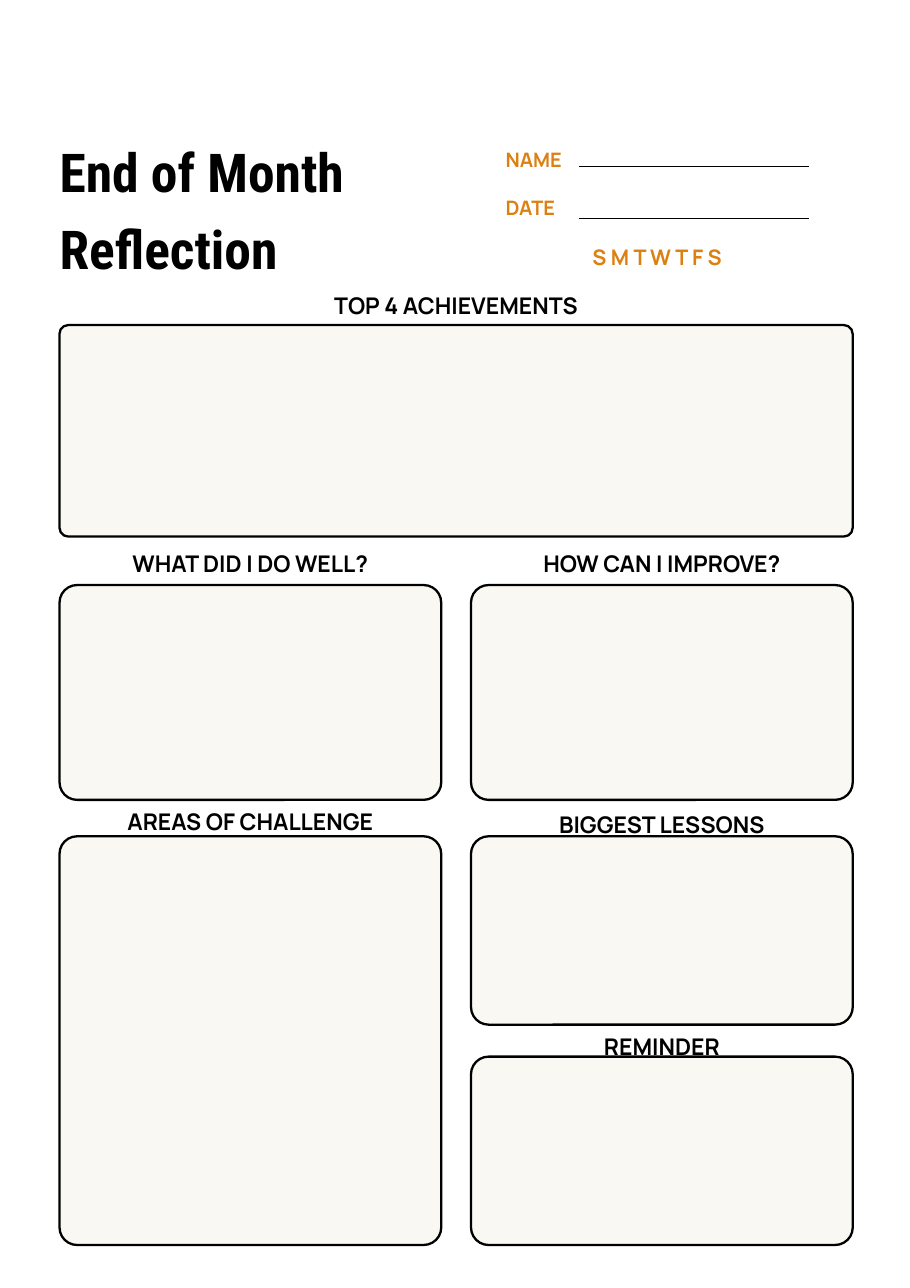
from pptx import Presentation
from pptx import util as u
from pptx.dml.color import RGBColor
from pptx.enum import shapes, text
from pptx.oxml.ns import qn
from lxml import etree

# Content: heading, heading top, box column, box top, box height, corner radius
PANELS = [
    ("TOP 4 ACHIEVEMENTS", 2.55, "full", 2.95, 1.92, 0.08),
    ("WHAT DID I DO WELL?", 4.89, "left", 5.31, 1.95, 0.16),
    ("HOW CAN I IMPROVE?", 4.89, "right", 5.31, 1.95, 0.16),
    ("AREAS OF CHALLENGE", 7.23, "left", 7.59, 3.71, 0.16),
    ("BIGGEST LESSONS", 7.26, "right", 7.59, 1.71, 0.16),
    ("REMINDER", 9.27, "right", 9.59, 1.71, 0.16),
]
# Label, label top, rule height
FIELDS = [("NAME", 1.25, 1.51), ("DATE", 1.69, 1.98)]
TITLE = "End of Month Reflection"
DAYS = "S M T W T F S"

THEME = {
    "ink": RGBColor.from_string("000000"),
    "accent": RGBColor.from_string("DD8012"),
    "panel": RGBColor.from_string("FAF8F2"),
    "head": "Roboto Condensed", "body": "Manrope",
    "title": 35, "section": 15, "days": 14, "label": 13,
    "border": 1.5, "rule": 0.75,
}

# Grid: two columns between equal margins
WIDTH, HEIGHT = 8.26, 11.69
EDGE, GAP, FULL = 0.54, 0.27, 7.2
HALF = (FULL - GAP) / 2
COLUMNS = {"full": (EDGE, FULL), "left": (EDGE, HALF),
           "right": (EDGE + HALF + GAP, HALF)}
FORM, START, END = 4.59, 5.26, 7.34

deck = Presentation()
deck.slide_width, deck.slide_height = u.Inches(WIDTH), u.Inches(HEIGHT)
slide = deck.slides.add_slide(deck.slide_layouts[5])


def inches(*sizes):
    return [u.Inches(size) for size in sizes]


def write(shape, words, size, color="ink", font="body", lead=1.4, center=False):
    frame = shape.text_frame
    frame.text = words
    frame.word_wrap = True
    frame.auto_size = text.MSO_AUTO_SIZE.NONE
    frame.vertical_anchor = text.MSO_ANCHOR.TOP
    frame.margin_left = frame.margin_right = 0
    frame.margin_top = frame.margin_bottom = 0
    line = frame.paragraphs[0]
    line.line_spacing = lead
    line.alignment = text.PP_ALIGN.CENTER if center else text.PP_ALIGN.LEFT
    style = line.runs[0].font
    style.name, style.size, style.bold = THEME[font], u.Pt(THEME[size]), True
    style.color.rgb = THEME[color]


def label(words, left, top, width, height, size, **look):
    box = slide.shapes.add_textbox(*inches(left, top, width, height))
    write(box, words, size, **look)


def panel(left, top, width, height, radius):
    box = slide.shapes.add_shape(shapes.MSO_SHAPE.ROUNDED_RECTANGLE,
                                 *inches(left, top, width, height))
    box.adjustments[0] = radius / min(width, height)
    box.shadow.inherit = False
    box.fill.solid()
    box.fill.fore_color.rgb = THEME["panel"]
    box.line.color.rgb = THEME["ink"]
    box.line.width = u.Pt(THEME["border"])


def rule(top):
    line = slide.shapes.add_connector(shapes.MSO_CONNECTOR.STRAIGHT,
                                      *inches(START, top, END, top))
    line.line.color.rgb = THEME["ink"]
    line.line.width = u.Pt(THEME["rule"])
    etree.SubElement(line._element.spPr, qn("a:effectLst"))


# Title
title = slide.shapes.title
title.left, title.top, title.width, title.height = inches(EDGE, 1.14, 3.74, 1.17)
write(title, TITLE, "title", font="head", lead=1.2)

# Panels, then their headings on top
for _, _, column, top, height, radius in PANELS:
    left, width = COLUMNS[column]
    panel(left, top, width, height, radius)
for words, top, column, *_ in PANELS:
    left, width = COLUMNS[column]
    label(words, left, top, width, 0.32, "section", center=True)

# Name, date and weekday form
for words, top, level in FIELDS:
    label(words, FORM, top, START - FORM, 0.22, "label", color="accent")
    rule(level)
label(DAYS, FORM, 2.12, END - FORM, 0.29, "days", color="accent", center=True)

deck.save("out.pptx")
